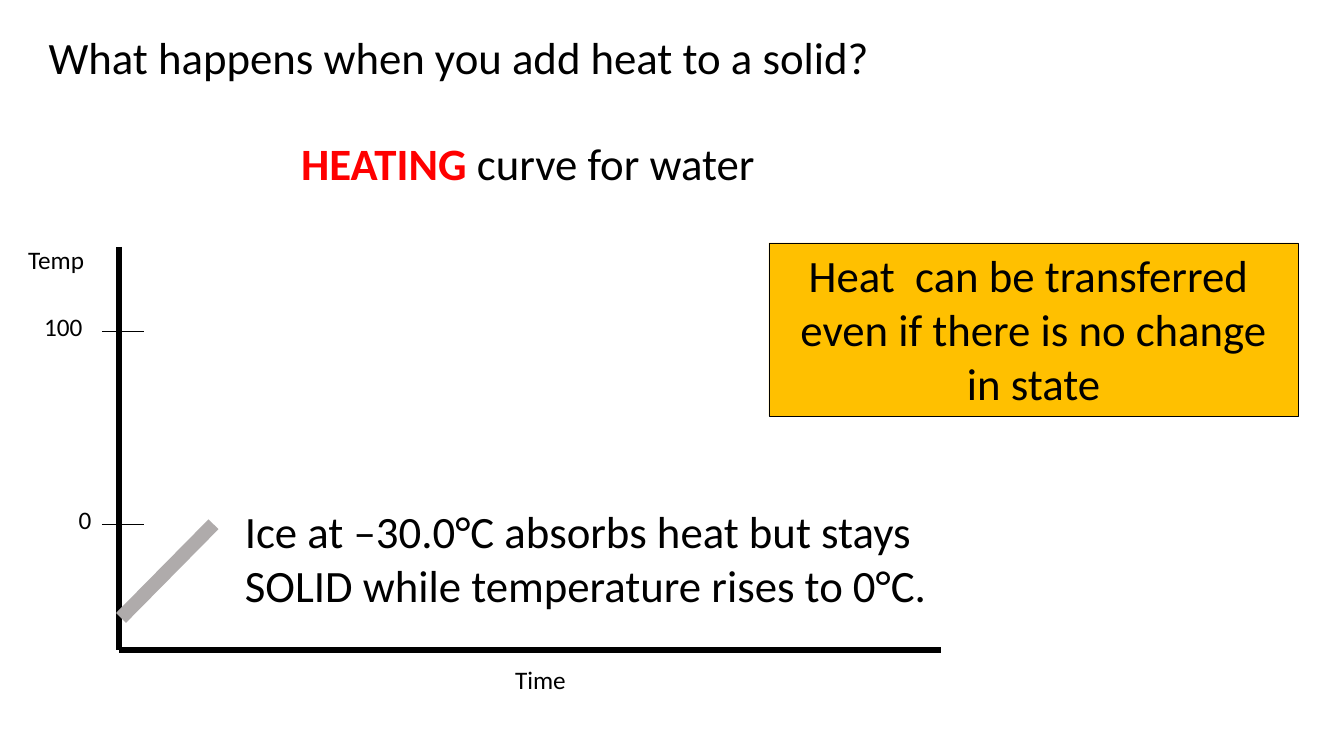
import pptx
import pptx.dml.color
import pptx.enum.shapes
import pptx.enum.text
import pptx.util
from lxml import etree
from pptx.util import Cm

COLORS = {"black": "000000", "red": "FF0000", "grey": "AFABAB", "amber": "FFC000"}
LARGE, SMALL = 32, 18

# Content: runs are (text, colour, bold); boxes are left, top, width, height in cm
TITLE = ([("What happens when you add heat to a solid?", "black", False)],
         (0.97, 0.61, 21.44, 1.63))
HEADING = ([("HEATING", "red", True), (" curve for water", "black", False)],
           (7.34, 3.3, 12.04, 1.63))
ICE_NOTE = ([("Ice at –30.0°C absorbs heat but stays SOLID while temperature rises to 0°C.",
              "black", False)], (5.92, 12.57, 19.41, 3))
CALLOUT = ([("Heat  can be transferred  even if there is no change in state", "black", False)],
           (19.38, 6.12, 13.34, 4.37))
AXIS_LABELS = [("Time", 12.73, 16.61, 2.29), ("Temp", 0.46, 6.02, 2.49)]
TICKS = [("0", 13.21, 1.73, 0.94), ("100", 8.36, 0.86, 1.78)]  # text, y, left, width

# Graph geometry in cm
AXIS_X, AXIS_TOP, AXIS_Y, AXIS_RIGHT = 3, 6.22, 16.38, 23.72
TICK_LEFT, TICK_RIGHT = 2.57, 3.63
LABEL_HEIGHT = 1.27
ICE_LINE = (3.05, 15.57, 5.38, TICKS[0][1])


def rgb(name):
    return pptx.dml.color.RGBColor.from_string(COLORS[name])


def write_text(shape, runs, size, align="LEFT"):
    frame = shape.text_frame
    settings = {
        "word_wrap": True,
        "auto_size": pptx.enum.text.MSO_AUTO_SIZE.NONE,
        "vertical_anchor": pptx.enum.text.MSO_ANCHOR.TOP,
    }
    for name, value in settings.items():
        setattr(frame, name, value)
    paragraph = frame.paragraphs[0]
    paragraph.alignment = getattr(pptx.enum.text.PP_ALIGN, align)
    paragraph.line_spacing = 1.0
    for text, color, bold in runs:
        run = paragraph.add_run()
        run.text = text
        font_values = {"name": "Calibri", "size": pptx.util.Pt(size), "bold": bold}
        for name, value in font_values.items():
            setattr(run.font, name, value)
        run.font.color.rgb = rgb(color)


def add_text(slide, runs, box, size):
    shape = slide.shapes.add_textbox(*map(Cm, box))
    write_text(shape, runs, size)


def add_line(slide, ends, color, width):
    line = slide.shapes.add_connector(
        pptx.enum.shapes.MSO_CONNECTOR.STRAIGHT, *map(Cm, ends))
    line.line.color.rgb = rgb(color)
    line.line.width = pptx.util.Pt(width)
    etree.SubElement(line._element.spPr, pptx.oxml.ns.qn("a:effectLst"))


def main():
    presentation = pptx.Presentation()
    presentation.slide_width, presentation.slide_height = Cm(33.87), Cm(19.05)
    slide = presentation.slides.add_slide(presentation.slide_layouts[5])

    # Title
    title = slide.shapes.title
    runs, box = TITLE
    for name, value in zip(("left", "top", "width", "height"), box):
        setattr(title, name, Cm(value))
    write_text(title, runs, LARGE)

    # Axes, ticks and their labels
    add_line(slide, (AXIS_X, AXIS_TOP, AXIS_X, AXIS_Y), "black", 4.5)
    add_line(slide, (AXIS_X, AXIS_Y, AXIS_RIGHT, AXIS_Y), "black", 4.5)
    labels = list(AXIS_LABELS)
    for text, y, left, width in TICKS:
        add_line(slide, (TICK_LEFT, y, TICK_RIGHT, y), "black", 0.75)
        labels.append((text, left, y - LABEL_HEIGHT / 2, width))
    for text, left, top, width in labels:
        add_text(slide, [(text, "black", False)], (left, top, width, LABEL_HEIGHT), SMALL)

    # Heading, heating line and its note
    add_text(slide, *HEADING, LARGE)
    add_line(slide, ICE_LINE, "grey", 10)
    add_text(slide, *ICE_NOTE, LARGE)

    # Callout
    runs, box = CALLOUT
    callout = slide.shapes.add_shape(
        pptx.enum.shapes.MSO_SHAPE.RECTANGLE, *map(Cm, box))
    callout.shadow.inherit = False
    callout.fill.solid()
    callout.fill.fore_color.rgb = rgb("amber")
    callout.line.color.rgb = rgb("black")
    callout.line.width = pptx.util.Pt(0.25)
    write_text(callout, runs, LARGE, "CENTER")

    presentation.save("out.pptx")


if __name__ == "__main__":
    main()
